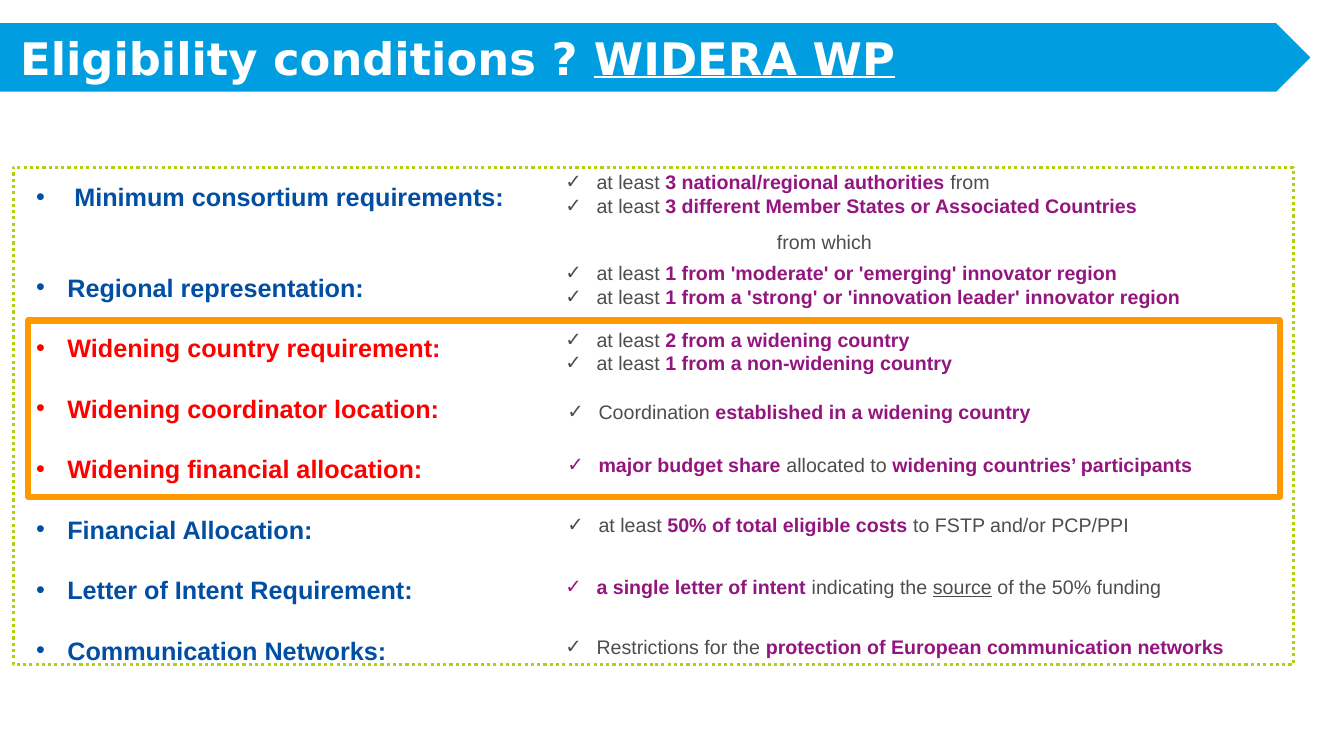
from dataclasses import dataclass

from lxml import etree
from pptx import Presentation
from pptx.dml.color import RGBColor
from pptx.enum.dml import MSO_LINE
from pptx.enum.shapes import MSO_SHAPE
from pptx.enum.text import MSO_ANCHOR, MSO_AUTO_SIZE, PP_ALIGN
from pptx.oxml.ns import qn
from pptx.util import Inches, Pt

RECT, BANNER = MSO_SHAPE.RECTANGLE, MSO_SHAPE.PENTAGON
DOTTED = MSO_LINE.ROUND_DOT
MIDDLE, GROW = MSO_ANCHOR.MIDDLE, MSO_AUTO_SIZE.SHAPE_TO_FIT_TEXT
JUSTIFY, LEFT = PP_ALIGN.JUSTIFY, PP_ALIGN.LEFT
COLS, ROWS = 160, 90
LABEL_GAP = 21.6


@dataclass(frozen=True)
class Theme:
    banner: str = "009EE0"
    white: str = "FFFFFF"
    frame: str = "B0D10E"
    highlight: str = "FF9900"
    label: str = "024EA2"
    widening: str = "FF0000"
    body: str = "4D4D4D"
    key: str = "931680"
    font: str = "Arial"
    title_font: str = "DejaVu Sans"
    title_size: int = 32
    label_size: int = 18
    body_size: int = 14


T = Theme()


def add_run(p, text, size=T.body_size, color=T.body, font=T.font, bold=False, underline=False):
    r = p.add_run()
    r.text = text
    f = r.font
    f.size, f.name, f.bold, f.underline = Pt(size), font, bold, underline
    f.color.rgb = RGBColor.from_string(color)


def plain(text, **fmt):
    return text, fmt


def key(text):
    return text, {"color": T.key, "bold": True}


def label(text, color=T.label):
    return text, {"size": T.label_size, "color": color, "bold": True}


def title(text, **fmt):
    return text, {"size": T.title_size, "color": T.white, "font": T.title_font, "bold": True, **fmt}


class Deck:
    """Holds the presentation, its current slide and the grid."""

    def __init__(self):
        self.prs = Presentation()
        self.prs.slide_width, self.prs.slide_height = Inches(13.333), Inches(7.5)
        self.s = self.prs.slides.add_slide(self.prs.slide_layouts[6])

    def cells(self, col, row, cols, rows):
        x, y = self.prs.slide_width / COLS, self.prs.slide_height / ROWS
        return [round(v) for v in (col * x, row * y, cols * x, rows * y)]

    def shape(self, kind, at, fill=None, line=None, width=1, dash=None):
        sp = self.s.shapes.add_shape(kind, *self.cells(*at))
        sp.shadow.inherit = False
        if fill:
            sp.fill.solid()
            sp.fill.fore_color.rgb = RGBColor.from_string(fill)
        else:
            sp.fill.background()
        if line:
            sp.line.color.rgb = RGBColor.from_string(line)
            sp.line.width = Pt(width)
            if dash:
                sp.line.dash_style = dash
        else:
            sp.line.fill.background()
        return sp

    def text(self, at):
        tf = self.s.shapes.add_textbox(*self.cells(*at)).text_frame
        tf.word_wrap = True
        return tf

    def paragraph(self, tf, runs, bullet=None, indent=0.31, before=0, align=JUSTIFY):
        first = tf.paragraphs[0]
        p = tf.add_paragraph() if first.runs else first
        p.alignment = align
        if before:
            p.space_before = Pt(before)
        if bullet:
            pPr = p._p.get_or_add_pPr()
            pPr.set("marL", str(Inches(indent)))
            pPr.set("indent", str(-Inches(indent)))
            etree.SubElement(pPr, qn("a:buFont")).set("typeface", T.font)
            etree.SubElement(pPr, qn("a:buChar")).set("char", bullet)
        for text, fmt in runs:
            add_run(p, text, **fmt)

    def checks(self, col, row, *lines):
        tf = self.text((col, row, 90, 1.32 + 2.76 * len(lines)))
        tf.auto_size = GROW
        for runs in lines:
            self.paragraph(tf, runs, bullet="✓")


# Label, colour, indent, gaps before
LABELS = [
    ("Minimum consortium requirements:", T.label, 0.38, 0),
    ("Regional representation:", T.label, 0.31, 2),
    ("Widening country requirement:", T.widening, 0.31, 1),
    ("Widening coordinator location:", T.widening, 0.31, 1),
    ("Widening financial allocation:", T.widening, 0.31, 1),
    ("Financial Allocation:", T.label, 0.31, 1),
    ("Letter of Intent Requirement:", T.label, 0.31, 1),
    ("Communication Networks:", T.label, 0.31, 1),
]

# Column, row, then one list of runs per check mark
AT_LEAST = plain("at least ")
CONDITIONS = [
    (66.12, 19.68,
     [AT_LEAST, key("3 national/regional authorities "), plain("from")],
     [AT_LEAST, key("3 different Member States or Associated Countries")]),
    (66.12, 30.48,
     [AT_LEAST, key("1 from 'moderate' or 'emerging' innovator region")],
     [AT_LEAST, key("1 from a 'strong' or 'innovation leader' innovator region")]),
    (66.12, 38.4,
     [AT_LEAST, key("2 from a widening country")],
     [AT_LEAST, key("1 from a non-widening country")]),
    (66.36, 47.04, [plain("Coordination "), key("established in a widening country")]),
    (66.36, 53.28,
     [key("major budget share "), plain("allocated to "),
      key("widening countries’ participants")]),
    (66.36, 60.48,
     [AT_LEAST, key("50% of total eligible costs "), plain("to FSTP and/or PCP/PPI")]),
    (66.12, 67.8,
     [key("a single letter of intent "), plain("indicating the "),
      plain("source", underline=True), plain(" of the 50% funding")]),
    (66.12, 75,
     [plain("Restrictions for the "), key("protection of European communication networks")]),
]


def main():
    d = Deck()

    # Frame and labels
    d.shape(RECT, (1.56, 19.92, 152.4, 59.16), line=T.frame, width=2.25, dash=DOTTED)
    tf = d.text((3.12, 21, 156.36, 63.84))
    for text, color, indent, gaps in LABELS:
        d.paragraph(tf, [label(text, color)], bullet="•", indent=indent,
                    before=gaps * LABEL_GAP)

    # Widening highlight
    d.shape(RECT, (3.36, 38.16, 149.04, 21), line=T.highlight, width=4.5)

    # Conditions
    for col, row, *lines in CONDITIONS:
        d.checks(col, row, *lines)
    tf = d.text((91.32, 26.76, 14.88, 4.08))
    tf.auto_size = GROW
    d.paragraph(tf, [plain("from which")], align=LEFT)

    # Title banner
    tf = d.shape(BANNER, (0, 2.76, 156, 8.16), fill=T.banner).text_frame
    tf.word_wrap, tf.vertical_anchor, tf.margin_left = True, MIDDLE, Inches(0.2)
    d.paragraph(tf, [title("Eligibility conditions ? "), title("WIDERA WP", underline=True)],
                align=LEFT)

    d.prs.save("out.pptx")


if __name__ == "__main__":
    main()
